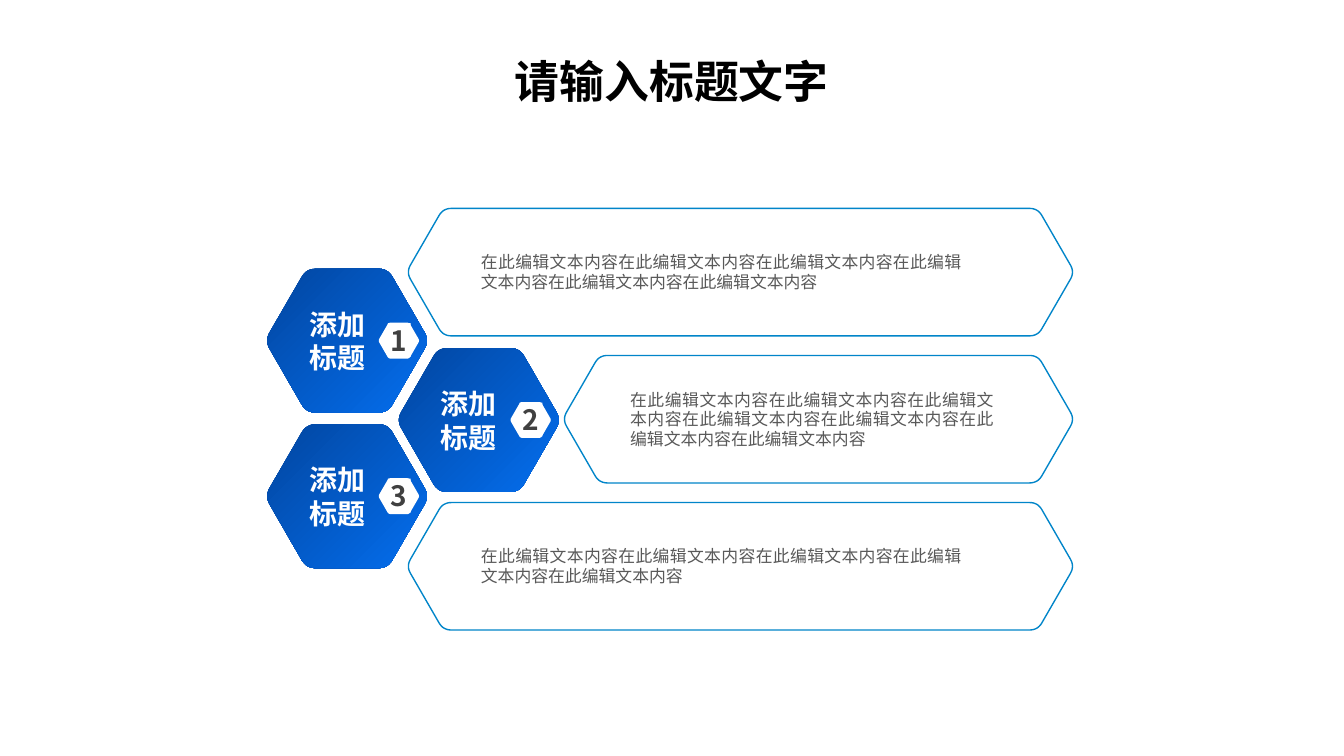
from dataclasses import dataclass
from math import cos, pi, sqrt

from lxml.etree import SubElement
from pptx import Presentation
from pptx.dml.color import RGBColor
from pptx.enum.shapes import MSO_SHAPE
from pptx.enum.text import MSO_ANCHOR, PP_ALIGN
from pptx.oxml.ns import qn
from pptx.util import Cm, Pt


@dataclass(frozen=True)
class Theme:
    """Hold the colours, font and type sizes."""

    font: str = "Noto Sans CJK SC"
    black: str = "000000"
    white: str = "FFFFFF"
    dark: str = "404040"
    grey: str = "595959"
    line: str = "0185C9"
    deep: str = "0246A0"
    bright: str = "046EEE"
    title: float = 24
    label: float = 15
    body: float = 9


THEME = Theme()
PHRASE = "在此编辑文本内容"
TILES = [(5.05, 5.08), (7.54, 6.58), (5.05, 8.02)]
PANELS = [(7.72, 9.09, 9.07, 6), (10.67, 11.91, 6.86, 7), (7.72, 9.09, 9.07, 5)]
TILE_W, TILE_H = 3.02, 2.72
PANEL_TOP, PANEL_H, PANEL_STEP, PANEL_END = 3.94, 2.41, 2.78, 20.27


def rgb(code):
    """Turn a hex code into a colour."""
    return RGBColor.from_string(code)


def write(shape, text, size=THEME.body, color=THEME.grey, bold=False,
          align=PP_ALIGN.CENTER, anchor=MSO_ANCHOR.TOP, inset=0, wrap=True,
          spacing=None):
    """Put formatted text into a shape."""
    frame = shape.text_frame
    frame.word_wrap = wrap
    frame.vertical_anchor = anchor
    frame.margin_left = frame.margin_right = Cm(inset)
    frame.margin_top = frame.margin_bottom = Cm(inset / 2)
    para = frame.paragraphs[0]
    para.alignment = align
    if spacing:
        para.line_spacing = Pt(spacing)
    run = para.add_run()
    run.text = text
    font = run.font
    font.name, font.size, font.bold = THEME.font, Pt(size), bold
    font.color.rgb = rgb(color)
    SubElement(run._r.get_or_add_rPr(), qn("a:ea"), typeface=THEME.font)


def outline(left, top, width, height):
    """List the points of a hexagon with rounded corners."""
    cut = 0.065 * height
    grow = cut * cos(pi / 3) / 2
    west, east = left - grow, left + width + grow
    mid, low = top + height / 2, top + height
    slope = height / 2 / sqrt(3)
    peaks = [(west, mid), (west + slope, top), (east - slope, top),
             (east, mid), (east - slope, low), (west + slope, low)]

    def toward(start, goal):
        """Step from one corner toward the next."""
        dx, dy = goal[0] - start[0], goal[1] - start[1]
        part = cut / sqrt(dx * dx + dy * dy)
        return start[0] + dx * part, start[1] + dy * part

    points = []
    for i, peak in enumerate(peaks):
        first = toward(peak, peaks[i - 1])
        last = toward(peak, peaks[(i + 1) % 6])
        for step in range(9):
            t = step / 8
            points.append(tuple(
                (1 - t) ** 2 * a + 2 * t * (1 - t) * b + t * t * c
                for a, b, c in zip(first, peak, last)))
    return points


def add_hex(shapes, *box):
    """Draw a rounded hexagon without fill or line."""
    points = [(Cm(x), Cm(y)) for x, y in outline(*box)]
    pen = shapes.build_freeform(*points[0])
    pen.add_line_segments(points[1:], close=True)
    shape = pen.convert_to_shape()
    shape.shadow.inherit = False
    shape.fill.background()
    shape.line.fill.background()
    return shape


def add_text(shapes, box, text, **style):
    """Add a text box with formatted text."""
    write(shapes.add_textbox(*map(Cm, box)), text, **style)


def add_panel(shapes, index, left, start, width, count):
    """Draw an outlined panel with its text."""
    top = PANEL_TOP + index * PANEL_STEP
    panel = add_hex(shapes, left, top, PANEL_END - left, PANEL_H)
    panel.line.color.rgb = rgb(THEME.line)
    panel.line.width = Pt(0.75)
    add_text(shapes, (start, top, width, PANEL_H), PHRASE * count,
             align=PP_ALIGN.JUSTIFY, anchor=MSO_ANCHOR.MIDDLE, spacing=10.5)


def add_badge(shapes, left, top, text):
    """Draw a white badge with its number."""
    group = shapes.add_group_shape().shapes
    badge = add_hex(group, left, top, 0.76, 0.68)
    plate = group.add_shape(MSO_SHAPE.RECTANGLE, Cm(left + 0.17), Cm(top + 0.01),
                            Cm(0.43), Cm(0.64))
    plate.shadow.inherit = False
    plate.line.fill.background()
    for shape in (badge, plate):
        shape.fill.solid()
        shape.fill.fore_color.rgb = rgb(THEME.white)
    write(plate, text, size=THEME.label, color=THEME.dark, bold=True,
          anchor=MSO_ANCHOR.MIDDLE)


def add_tile(shapes, number, left, top):
    """Draw a blue tile with its label and badge."""
    fill = add_hex(shapes, left, top, TILE_W, TILE_H).fill
    fill.gradient()
    fill.gradient_angle = 315
    for stop, code in zip(fill.gradient_stops, (THEME.deep, THEME.bright)):
        stop.color.rgb = rgb(code)
    add_text(shapes, (left + 0.66, top + 0.73, 1.32, 1.27), "添加标题",
             size=THEME.label, color=THEME.white, bold=True)
    add_badge(shapes, left + 2.11, top + 1.02, str(number))


def add_title(slide, text):
    """Place and fill the title."""
    title = slide.shapes.title
    title.left, title.top, title.width, title.height = map(
        Cm, (9.47, 0.89, 6.45, 1.27))
    write(title, text, size=THEME.title, color=THEME.black, bold=True,
          inset=0.25, wrap=False)


def main():
    """Build and save the slide."""
    deck = Presentation()
    deck.slide_width, deck.slide_height = Cm(25.4), Cm(14.29)
    slide = deck.slides.add_slide(deck.slide_layouts[5])
    add_title(slide, "请输入标题文字")
    for index, panel in enumerate(PANELS):
        add_panel(slide.shapes, index, *panel)
    for number, place in enumerate(TILES, 1):
        add_tile(slide.shapes, number, *place)
    deck.save("out.pptx")


if __name__ == "__main__":
    main()
